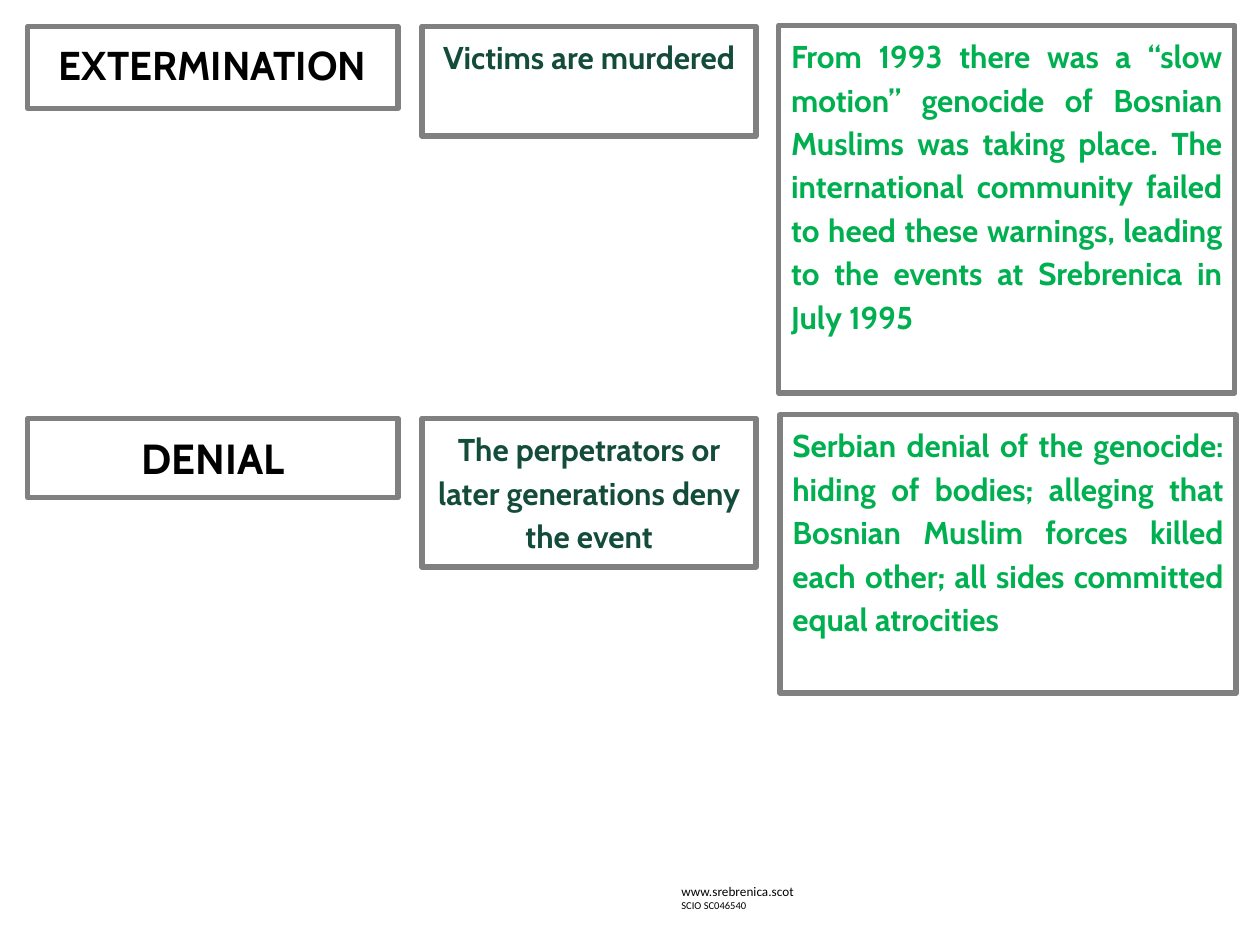
from pptx import Presentation
from pptx.dml.color import RGBColor
from pptx.enum.shapes import MSO_SHAPE as Shape
from pptx.enum.text import MSO_ANCHOR as Anchor, PP_ALIGN as Align
from pptx.util import Inches, Pt

COLORS = {"white": "FFFFFF", "frame": "808080", "black": "000000",
          "dark": "144C3B", "green": "00B050"}


def color(name):
    return RGBColor.from_string(COLORS[name])


def style(para, face, size, tint, bold=False):
    font = para.font
    font.name, font.size, font.bold = face, Pt(size), bold
    font.color.rgb = color(tint)


def add_card(slide, box, text, size, tint, align):
    """Framed white card with bold text at its top."""
    card = slide.shapes.add_shape(Shape.RECTANGLE, *map(Inches, box))
    card.shadow.inherit = False
    card.fill.solid()
    card.fill.fore_color.rgb = color("white")
    card.line.color.rgb = color("frame")
    card.line.width = Pt(3)
    frame = card.text_frame
    frame.word_wrap = True
    frame.vertical_anchor = Anchor.TOP
    frame.text = text
    para = frame.paragraphs[0]
    para.alignment, para.line_spacing = align, 1.15
    style(para, "Cabin", size, tint, True)


def add_stage(slide, boxes, size, texts):
    """One stage: its name, what it means, and the Bosnian example."""
    looks = [(size, "black", Align.CENTER),
             (18, "dark", Align.CENTER),
             (18, "green", Align.JUSTIFY)]
    for box, text, look in zip(boxes, texts, looks):
        add_card(slide, box, text, *look)


def add_footer(slide, box):
    """Web address and charity number."""
    frame = slide.shapes.add_textbox(*map(Inches, box)).text_frame
    frame.word_wrap = True
    frame.text = "www.srebrenica.scot\nSCIO SC046540"
    for para, size in zip(frame.paragraphs, (7.5, 6)):
        style(para, "Calibri", size, "black")


def main():
    deck = Presentation()
    deck.slide_width, deck.slide_height = Inches(10), Inches(7.5)
    slide = deck.slides.add_slide(deck.slide_layouts[6])

    add_footer(slide, (5.31, 6.96, 2.53, 0.4))

    # Upper stage
    add_stage(
        slide,
        [(0.22, 0.21, 2.94, 0.65), (3.35, 0.21, 2.65, 0.87),
         (6.18, 0.2, 3.62, 2.92)],
        23,
        ["EXTERMINATION",
         "Victims are murdered",
         "From 1993 there was a “slow motion” genocide of Bosnian Muslims "
         "was taking place. The international community failed to heed these "
         "warnings, leading to the events at Srebrenica in July 1995"])

    # Lower stage
    add_stage(
        slide,
        [(0.22, 3.32, 2.94, 0.63), (3.35, 3.32, 2.65, 1.18),
         (6.19, 3.29, 3.62, 2.21)],
        24,
        ["DENIAL",
         "The perpetrators or later generations deny the event",
         "Serbian denial of the genocide: hiding of bodies; alleging that "
         "Bosnian Muslim forces killed each other; all sides committed equal "
         "atrocities"])

    deck.save("out.pptx")


if __name__ == "__main__":
    main()
